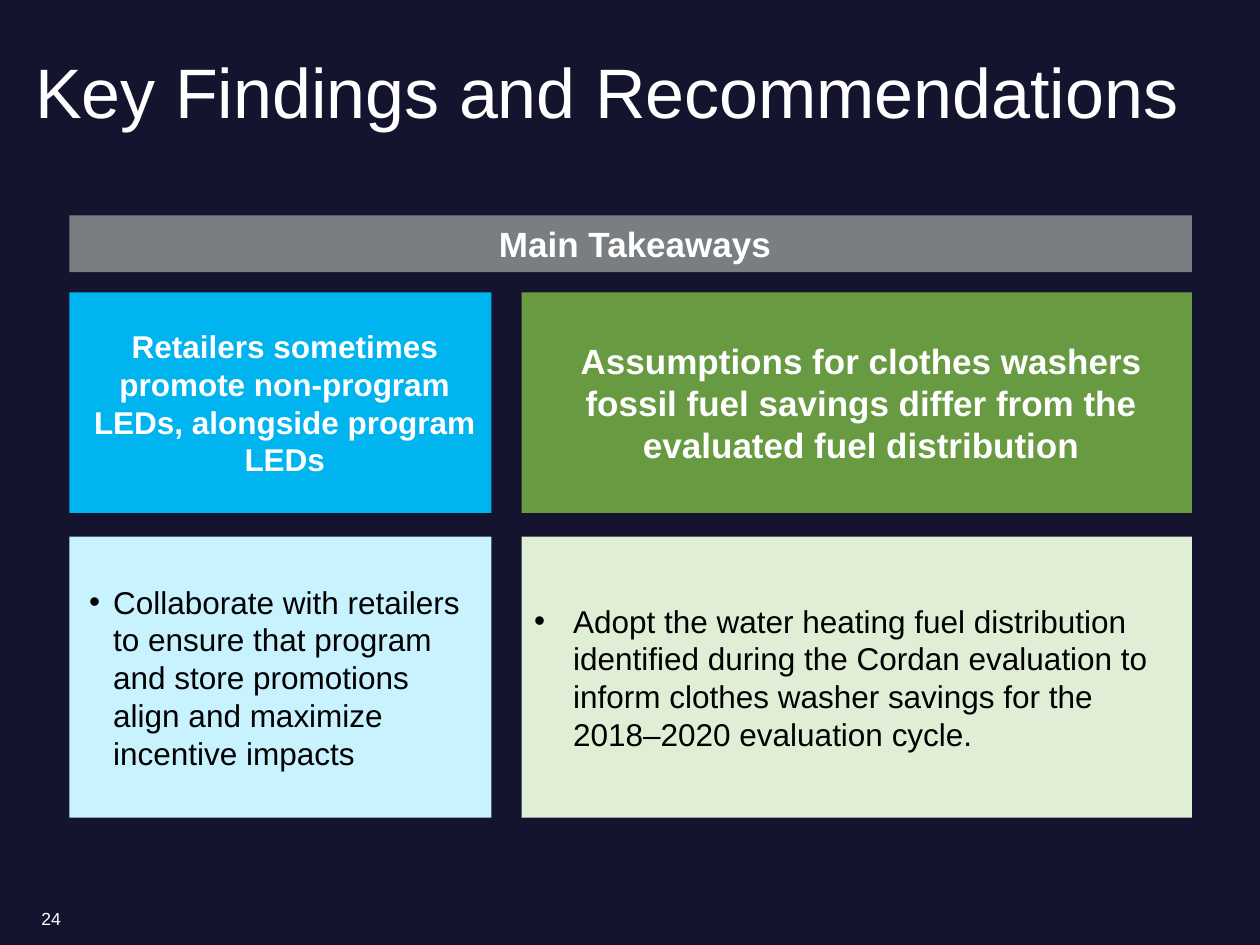
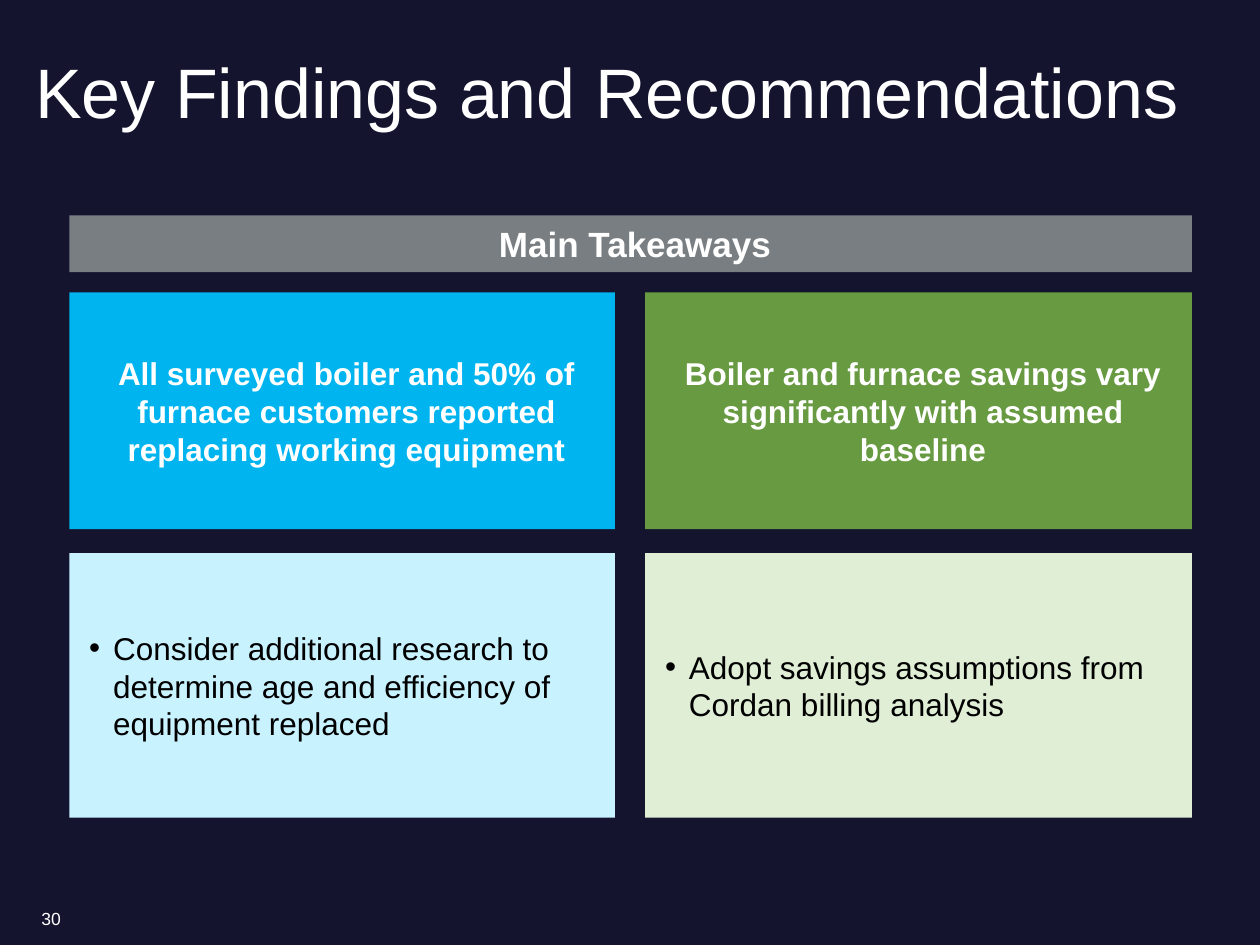
from dataclasses import dataclass

from lxml import etree
from pptx import Presentation
from pptx import util as u
from pptx.dml.color import RGBColor
from pptx.enum import shapes, text
from pptx.oxml import ns

COLUMNS, ROWS = 100, 75
UNIT = u.Inches(0.1)
GAP_X, GAP_Y = 2.4, 1.9


@dataclass(frozen=True)
class Theme:
    font: str = "Arial"
    background: str = "14142F"
    light: str = "FFFFFF"
    dark: str = "000000"
    banner: str = "797E82"
    headings: tuple = ("00B4EF", "679A41")
    bodies: tuple = ("C9F2FF", "E0EED6")
    title_size: int = 40
    large_size: int = 20
    body_size: int = 18
    footer_size: int = 10


@dataclass(frozen=True)
class Box:
    """An area in grid columns and rows."""
    left: float
    top: float
    width: float
    height: float

    def emu(self):
        return [round(n * UNIT) for n in (self.left, self.top, self.width, self.height)]


@dataclass(frozen=True)
class Card:
    finding: str
    advice: str
    finding_size: int = Theme.body_size
    indent: float = 0.25
    hanging: float = 0.19


THEME = Theme()
TITLE = Box(2.3, 2.7, 94.4, 7.9)
NUMBER = Box(2.3, 70.9, 30, 4)
BANNER = Box(5.5, 17.1, 89.1, 4.5)
CARDS = Box(5.5, 23.2, 89.1, 41.7)


def write(frame, words, *, size, color=THEME.light, bold=False,
          align=text.PP_ALIGN.LEFT, anchor=text.MSO_ANCHOR.MIDDLE,
          indent=0, hanging=0, line_spacing=None):
    """Fill a text frame with one paragraph; a hanging indent adds a bullet."""
    frame.word_wrap = True
    frame.auto_size = text.MSO_AUTO_SIZE.NONE
    frame.vertical_anchor = anchor
    para = frame.paragraphs[0]
    para.text = words
    para.alignment = align
    if line_spacing:
        para.line_spacing = line_spacing
    properties = para._p.get_or_add_pPr()
    properties.set("marL", str(u.Inches(indent)))
    properties.set("indent", str(-u.Inches(hanging)))
    if hanging:
        etree.SubElement(properties, ns.qn("a:buFont"), typeface=THEME.font)
        etree.SubElement(properties, ns.qn("a:buChar"), char="•")
    font = para.runs[0].font
    font.name, font.size, font.bold = THEME.font, u.Pt(size), bold
    font.color.rgb = RGBColor.from_string(color)


def add_panel(page, box, fill, words, **style):
    panel = page.shapes.add_shape(shapes.MSO_SHAPE.RECTANGLE, *box.emu())
    panel.shadow.inherit = False
    panel.fill.solid()
    panel.fill.fore_color.rgb = RGBColor.from_string(fill)
    panel.line.fill.background()
    write(panel.text_frame, words, **style)


def add_heading(page, box, fill, words, size):
    add_panel(page, box, fill, words, size=size, bold=True,
              align=text.PP_ALIGN.CENTER, indent=0.07)


def add_title(page, words):
    title = page.shapes.title
    title.left, title.top, title.width, title.height = TITLE.emu()
    frame = title.text_frame
    frame.margin_left, frame.margin_right = u.Inches(0.05), u.Inches(0.1)
    frame.margin_top = frame.margin_bottom = 0
    write(frame, words, size=THEME.title_size,
          anchor=text.MSO_ANCHOR.BOTTOM, line_spacing=0.9)


def add_number(page, number):
    box = page.shapes.add_textbox(*NUMBER.emu())
    write(box.text_frame, str(number), size=THEME.footer_size)


def add_card(page, box, card, heading_rows, heading_fill, body_fill):
    """Place a finding above its recommendation within the box."""
    body_offset = heading_rows + GAP_Y
    add_heading(page, Box(box.left, box.top, box.width, heading_rows),
                heading_fill, card.finding, card.finding_size)
    add_panel(page, Box(box.left, box.top + body_offset, box.width, box.height - body_offset),
              body_fill, card.advice, size=THEME.body_size, color=THEME.dark,
              indent=card.indent, hanging=card.hanging)


def add_findings_page(deck, number, cards, first_columns, heading_rows):
    page = deck.slides.add_slide(deck.slide_layouts.get_by_name("Title Only"))
    add_title(page, "Key Findings and Recommendations")
    add_number(page, number)
    add_heading(page, BANNER, THEME.banner, "Main Takeaways", THEME.large_size)
    left = CARDS.left
    widths = (first_columns, CARDS.width - GAP_X - first_columns)
    for card, width, *fills in zip(cards, widths, THEME.headings, THEME.bodies):
        add_card(page, Box(left, CARDS.top, width, CARDS.height), card, heading_rows, *fills)
        left += width + GAP_X


def main():
    deck = Presentation()
    deck.slide_width, deck.slide_height = COLUMNS * UNIT, ROWS * UNIT
    backdrop = deck.slide_master.background.fill
    backdrop.solid()
    backdrop.fore_color.rgb = RGBColor.from_string(THEME.background)

    add_findings_page(deck, 24, (
        Card("Retailers sometimes promote non-program LEDs, alongside program LEDs",
             "Collaborate with retailers to ensure that program and store promotions "
             "align and maximize incentive impacts"),
        Card("Assumptions for clothes washers fossil fuel savings differ from the "
             "evaluated fuel distribution",
             "Adopt the water heating fuel distribution identified during the Cordan "
             "evaluation to inform clothes washer savings for the 2018–2020 evaluation cycle.",
             finding_size=THEME.large_size, indent=0.31, hanging=0.31),
    ), first_columns=33.5, heading_rows=17.5)

    add_findings_page(deck, 30, (
        Card("All surveyed boiler and 50% of furnace customers reported replacing "
             "working equipment",
             "Consider additional research to determine age and efficiency of "
             "equipment replaced"),
        Card("Boiler and furnace savings vary significantly with assumed baseline",
             "Adopt savings assumptions from Cordan billing analysis"),
    ), first_columns=43.3, heading_rows=18.8)

    deck.save("out.pptx")


if __name__ == "__main__":
    main()
